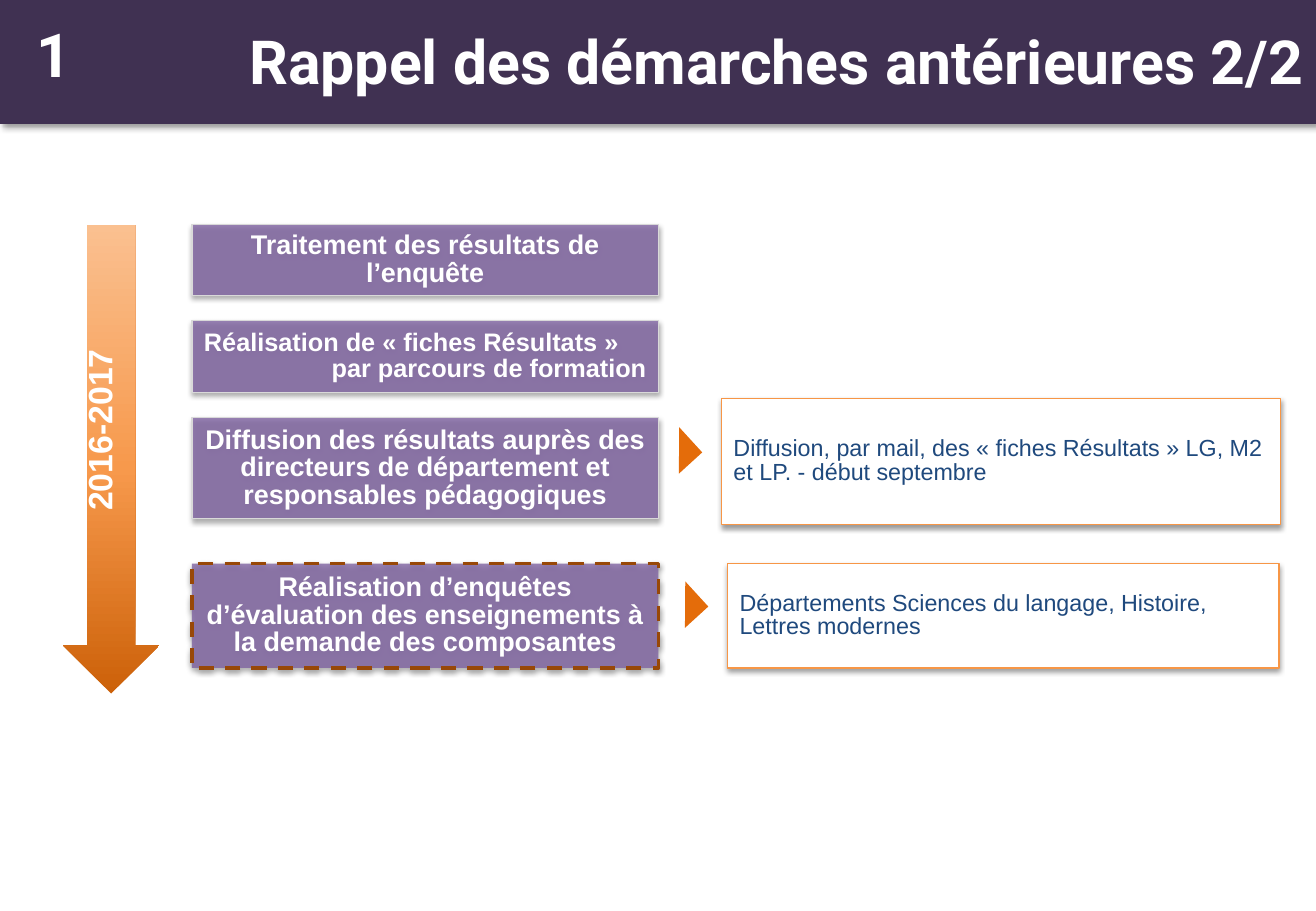
from lxml.etree import SubElement
from pptx import Presentation
from pptx.dml.color import RGBColor
from pptx.enum.dml import MSO_LINE
from pptx.enum.shapes import MSO_SHAPE
from pptx.enum.text import MSO_ANCHOR, MSO_AUTO_SIZE, PP_ALIGN
from pptx.oxml.ns import qn
from pptx.util import Pt

WHITE = RGBColor(0xFF, 0xFF, 0xFF)
BLACK = RGBColor(0x00, 0x00, 0x00)
PLUM = RGBColor(0x40, 0x31, 0x52)
PURPLE = RGBColor(0x80, 0x64, 0xA2)
GREY = RGBColor(0xD9, 0xD9, 0xD9)
BROWN = RGBColor(0x98, 0x48, 0x07)
ORANGE = RGBColor(0xF7, 0x96, 0x46)
RUST = RGBColor(0xE4, 0x6C, 0x0A)
NAVY = RGBColor(0x1F, 0x49, 0x7D)
FADE = [
    (0, RGBColor(0xCC, 0x61, 0x09)),
    (48, RGBColor(0xF7, 0x99, 0x4C)),
    (100, RGBColor(0xFA, 0xC0, 0x90)),
]

LEFT, RIGHT, MID = PP_ALIGN.LEFT, PP_ALIGN.RIGHT, PP_ALIGN.CENTER

# top, height, size, dashed, lines
STEPS = [
    (133.2, 41.8, 16, False, [("Traitement des résultats de l’enquête", MID)]),
    (190.1, 42.5, 15, False, [("Réalisation de « fiches Résultats »", LEFT),
                              ("par parcours de formation", RIGHT)]),
    (247.7, 59.8, 16, False, [("Diffusion des résultats auprès des directeurs de "
                               "département et responsables pédagogiques", MID)]),
    (334.1, 61.9, 16, True, [("Réalisation d’enquêtes d’évaluation des "
                              "enseignements à la demande des composantes", MID)]),
]
# left, top, width, height, text
NOTES = [
    (427.7, 236.2, 331.2, 74.9, "Diffusion, par mail, des « fiches Résultats » LG, M2 "
                                "et LP. - début septembre"),
    (431.3, 334.1, 326.9, 61.9, "Départements Sciences du langage, Histoire, "
                                "Lettres modernes"),
]


def add_shade(shape, alpha=38, blur=3.1, dist=1.6, angle=90):
    """Give the shape an outer shadow."""
    shape.shadow.inherit = False
    effects = shape._element.spPr.find(qn("a:effectLst"))
    outer = SubElement(effects, qn("a:outerShdw"), blurRad=str(Pt(blur)),
                       dist=str(Pt(dist)), dir=str(angle * 60000), rotWithShape="0")
    color = SubElement(outer, qn("a:srgbClr"), val=str(BLACK))
    SubElement(color, qn("a:alpha"), val=str(alpha * 1000))


def paint(shape, color, alpha=100):
    shape.fill.solid()
    shape.fill.fore_color.rgb = color
    if alpha < 100:
        fill = shape._element.spPr.find(qn("a:solidFill"))
        SubElement(fill[0], qn("a:alpha"), val=str(alpha * 1000))


def add_form(slide, kind, left, top, width, height):
    """Add a preset shape with no shadow and no line."""
    shape = slide.shapes.add_shape(kind, Pt(left), Pt(top), Pt(width), Pt(height))
    shape.shadow.inherit = False
    shape.line.fill.background()
    return shape


def write(frame, lines, size, color, bold=True, font="Arial", space=0.85):
    for index, (text, align) in enumerate(lines):
        para = frame.paragraphs[0] if index == 0 else frame.add_paragraph()
        para.alignment = align
        para.line_spacing = space
        run = para.add_run()
        run.text = text
        run.font.name = font
        run.font.size = Pt(size)
        run.font.bold = bold
        run.font.color.rgb = color


def add_card(slide, box, fill, alpha, edge, weight):
    """Add a shadowed rectangle whose text is centred in height."""
    card = add_form(slide, MSO_SHAPE.RECTANGLE, *box)
    paint(card, fill, alpha)
    card.line.color.rgb = edge
    card.line.width = Pt(weight)
    add_shade(card)
    card.text_frame.word_wrap = True
    card.text_frame.vertical_anchor = MSO_ANCHOR.MIDDLE
    return card


def add_step(slide, top, height, size, dashed, lines):
    edge, weight = (BROWN, 2.25) if dashed else (GREY, 0.75)
    card = add_card(slide, (113.8, top, 276.5, height), PURPLE, 80, edge, weight)
    if dashed:
        card.line.dash_style = MSO_LINE.DASH
    write(card.text_frame, lines, size, WHITE)


def add_note(slide, left, top, width, height, text):
    """Add a remark and the pointer on its left."""
    card = add_card(slide, (left, top, width, height), WHITE, 100, ORANGE, 0.75)
    write(card.text_frame, [(text, LEFT)], 13.8, NAVY, bold=False)
    mark = add_form(slide, MSO_SHAPE.RIGHT_TRIANGLE,
                    left - 35.3, top + height / 2 - 16, 20.2, 18.7)
    mark.rotation = 227.6
    paint(mark, RUST)


def add_label(slide, box, text, size, font="Arial", wrap=True):
    label = slide.shapes.add_textbox(*[Pt(length) for length in box])
    label.text_frame.word_wrap = wrap
    write(label.text_frame, [(text, MID)], size, WHITE, font=font)
    return label


def add_time(slide):
    """Add the shaded arrow and its upright period."""
    arrow = add_form(slide, MSO_SHAPE.DOWN_ARROW, 37.4, 133.2, 56.9, 277.9)
    arrow.fill.gradient()
    arrow.fill.gradient_angle = 90
    stops = arrow._element.spPr.find(qn("a:gradFill")).find(qn("a:gsLst"))
    for stop in list(stops):
        stops.remove(stop)
    for place, color in FADE:
        stop = SubElement(stops, qn("a:gs"), pos=str(place * 1000))
        SubElement(stop, qn("a:srgbClr"), val=str(color))
    label = add_label(slide, (46.8, 190.8, 55.4, 128.2), "2016-2017", 20)
    label.text_frame._txBody.bodyPr.set("vert", "vert270")


def add_title(slide):
    title = slide.shapes.title
    title.left, title.top = Pt(0), Pt(-2.2)
    title.width, title.height = Pt(780), Pt(75.6)
    paint(title, PLUM)
    add_shade(title, 40, 4, 3, 45)
    frame = title.text_frame
    frame.auto_size = MSO_AUTO_SIZE.NONE
    frame.vertical_anchor = MSO_ANCHOR.MIDDLE
    write(frame, [("Rappel des démarches antérieures 2/2", RIGHT)], 36, WHITE,
          font="Roboto", space=1.0)


def main():
    deck = Presentation()
    deck.slide_width, deck.slide_height = Pt(780), Pt(540)
    slide = deck.slides.add_slide(deck.slide_layouts[5])
    add_title(slide)
    add_label(slide, (14.4, 13, 32.4, 46.1), "1", 36, "Roboto", wrap=False)
    add_time(slide)
    for step in STEPS:
        add_step(slide, *step)
    for note in NOTES:
        add_note(slide, *note)
    deck.save("out.pptx")


if __name__ == "__main__":
    main()
